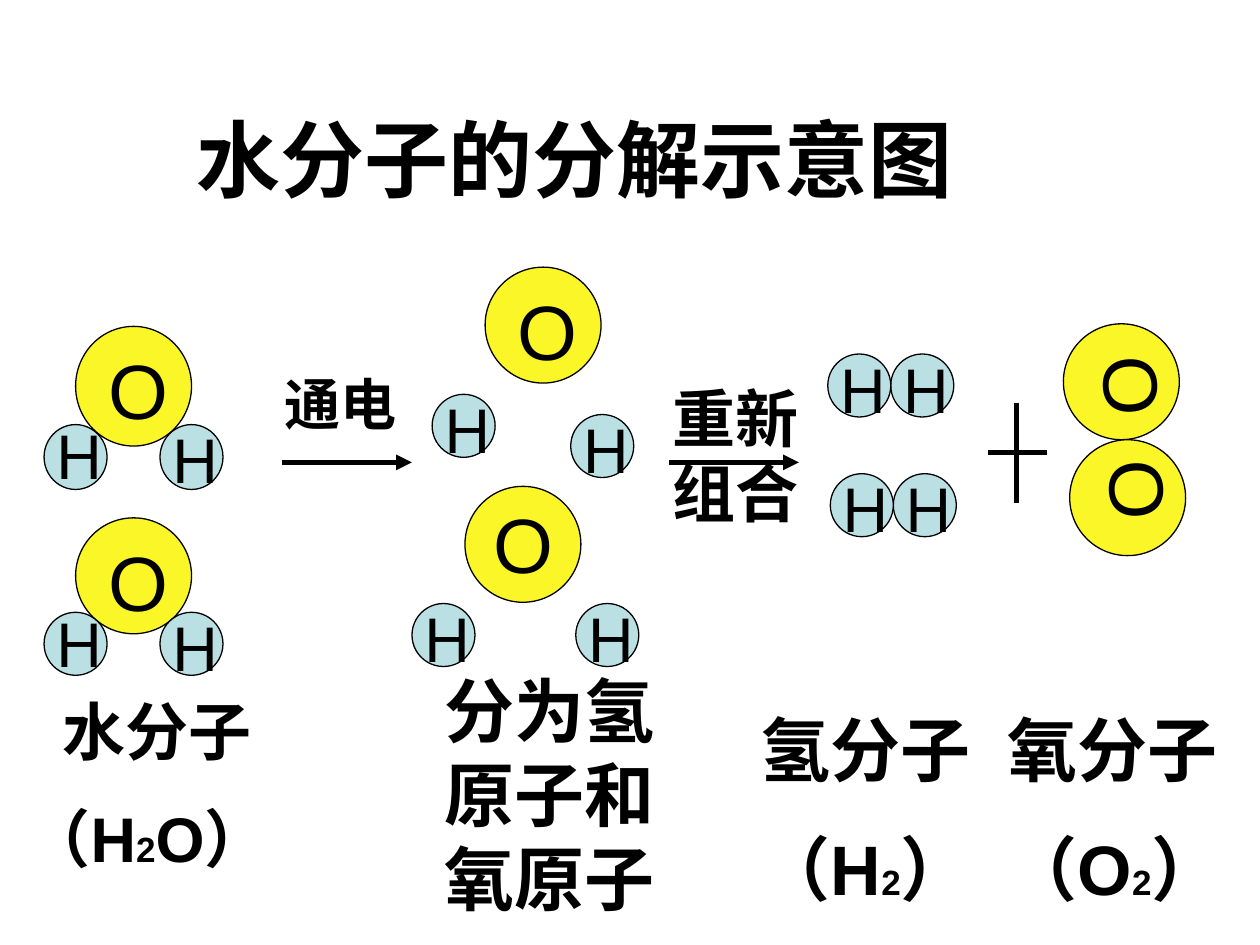
from dataclasses import dataclass

from lxml import etree
from pptx import Presentation
from pptx.dml.color import RGBColor
from pptx.enum.shapes import MSO_CONNECTOR, MSO_SHAPE
from pptx.enum.text import MSO_ANCHOR, MSO_AUTO_SIZE, PP_ALIGN
from pptx.oxml.ns import qn
from pptx.util import Inches, Pt

ELLIPSE = MSO_SHAPE.OVAL
STRAIGHT = MSO_CONNECTOR.STRAIGHT
TOP = MSO_ANCHOR.TOP
LEFT = PP_ALIGN.LEFT
GROW = MSO_AUTO_SIZE.SHAPE_TO_FIT_TEXT


@dataclass(frozen=True)
class Theme:
    font: str = "Arial"
    ink: RGBColor = RGBColor(0x00, 0x00, 0x00)
    oxygen: RGBColor = RGBColor(0xFB, 0xF6, 0x27)
    hydrogen: RGBColor = RGBColor(0xBB, 0xE0, 0xE3)
    title: int = 48
    product: int = 40
    label: int = 36
    step: int = 32
    subscript: int = 20
    outline: float = 0.75
    stroke: float = 3


THEME = Theme()


@dataclass(frozen=True)
class Element:
    size: float
    fill: RGBColor
    text_size: int
    label_width: float
    label_height: float
    label_shift: tuple[float, float]


ELEMENTS = {
    "O": Element(0.92, THEME.oxygen, 44, 0.67, 0.83, (0.16, 0.08)),
    "H": Element(0.5, THEME.hydrogen, THEME.label, 0.67, 0.7, (0, -0.08)),
}


@dataclass(frozen=True)
class Atom:
    symbol: str
    left: float
    top: float
    label_shift: tuple[float, float] | None = None
    stretch: float = 0


@dataclass(frozen=True)
class Molecule:
    atoms: tuple[Atom, ...]
    rotation: float = 0


@dataclass(frozen=True)
class Caption:
    lines: tuple[tuple[str, ...], ...]
    left: float
    top: float
    width: float
    height: float
    size: int
    indent: float = 0


@dataclass(frozen=True)
class Stroke:
    start: tuple[float, float]
    end: tuple[float, float]
    arrow: bool = False


def water(top: float, hydrogen_top: float, stretch: float) -> Molecule:
    return Molecule((
        Atom("O", 0.6, top, stretch=stretch),
        Atom("H", 1.27, hydrogen_top, stretch=stretch / 2),
        Atom("H", 0.35, hydrogen_top, (0, -0.11), stretch / 2),
    ))


def hydrogen_pair(left: float, top: float) -> Molecule:
    return Molecule((Atom("H", left + 0.5, top), Atom("H", left, top)))


MOLECULES = (
    water(4.11, 4.86, 0),
    water(2.59, 3.37, 0.03),
    Molecule((Atom("O", 8.44, 2.57), Atom("O", 8.49, 3.49, (0.16, -0.01))), 267),
    hydrogen_pair(6.57, 2.81),
    hydrogen_pair(6.59, 3.76),
    Molecule((Atom("O", 3.85, 2.12),)),
    Molecule((Atom("O", 3.69, 3.86, (0.13, 0.03)),)),
    Molecule((Atom("H", 4.53, 3.29),)),
    Molecule((Atom("H", 3.43, 3.13),)),
    Molecule((Atom("H", 4.57, 4.79),)),
    Molecule((Atom("H", 3.27, 4.79),)),
)

CAPTIONS = (
    Caption((("重新组合",),), 5.24, 2.96, 1.26, 1.3, THEME.label),
    Caption((("水分子",), ("（H", "2", "O）")), 0.12, 5.45, 2.42, 1.6, THEME.label, 0.28),
    Caption((("氧分子",), ("（O", "2", "）")), 7.9, 5.56, 3.17, 1.77, THEME.product),
    Caption((("氢分子",), ("（H", "2", "）")), 5.94, 5.56, 3.33, 1.77, THEME.product),
    Caption((("通电",),), 2.16, 2.88, 1.26, 0.63, THEME.step),
    Caption((("分为氢原子和氧原子",),), 3.43, 5.25, 2.28, 2.1, THEME.product),
)

ARROWS = (
    Stroke((2.24, 3.67), (3.27, 3.67), True),
    Stroke((5.31, 3.67), (6.34, 3.67), True),
)
PLUS = (
    Stroke((7.84, 3.59), (8.31, 3.59)),
    Stroke((8.07, 3.2), (8.07, 3.99)),
)


def format_paragraph(para, size: int, bold: bool) -> None:
    para.alignment = LEFT
    para.font.name = THEME.font
    para.font.size = Pt(size)
    para.font.bold = bold
    para.font.color.rgb = THEME.ink


def add_label(shapes, text: str, left: float, top: float, element: Element, rotation: float) -> None:
    box = shapes.add_textbox(
        Inches(left), Inches(top), Inches(element.label_width), Inches(element.label_height))
    box.rotation = rotation
    box.text_frame.word_wrap = True
    box.text_frame.auto_size = GROW
    para = box.text_frame.paragraphs[0]
    para.text = text
    format_paragraph(para, element.text_size, False)


def add_molecule(shapes, molecule: Molecule) -> None:
    group = shapes.add_group_shape()
    for atom in molecule.atoms:
        element = ELEMENTS[atom.symbol]
        ball = group.shapes.add_shape(
            ELLIPSE, Inches(atom.left), Inches(atom.top),
            Inches(element.size), Inches(element.size + atom.stretch))
        ball.rotation = molecule.rotation
        ball.shadow.inherit = False
        ball.fill.solid()
        ball.fill.fore_color.rgb = element.fill
        ball.line.color.rgb = THEME.ink
        ball.line.width = Pt(THEME.outline)
    for atom in molecule.atoms:
        element = ELEMENTS[atom.symbol]
        across, down = atom.label_shift or element.label_shift
        add_label(group.shapes, atom.symbol, atom.left + across, atom.top + down,
                  element, molecule.rotation)


def add_caption(shapes, caption: Caption) -> None:
    box = shapes.add_textbox(
        Inches(caption.left), Inches(caption.top), Inches(caption.width), Inches(caption.height))
    frame = box.text_frame
    frame.word_wrap = True
    frame.auto_size = GROW
    for index, line in enumerate(caption.lines):
        para = frame.add_paragraph() if index else frame.paragraphs[0]
        format_paragraph(para, caption.size, True)
        if index:
            para.space_before = Pt(caption.size / 2)
        elif caption.indent:
            para._p.get_or_add_pPr().set("marL", str(Inches(caption.indent)))
        for text in line:
            span = para.add_run()
            span.text = text
            if text.isdigit():
                span.font.size = Pt(THEME.subscript)


def add_stroke(shapes, stroke: Stroke) -> None:
    points = (Inches(value) for value in stroke.start + stroke.end)
    connector = shapes.add_connector(STRAIGHT, *points)
    connector.line.color.rgb = THEME.ink
    connector.line.width = Pt(THEME.stroke)
    if stroke.arrow:
        etree.SubElement(connector.line._get_or_add_ln(), qn("a:tailEnd"), type="triangle")
    etree.SubElement(connector._element.spPr, qn("a:effectLst"))


def add_title(slide, text: str) -> None:
    title = slide.shapes.title
    title.left, title.top = Inches(1.46), Inches(0.8)
    title.width, title.height = Inches(7.4), Inches(0.9)
    frame = title.text_frame
    frame.text = text
    frame.vertical_anchor = TOP
    frame.auto_size = GROW
    format_paragraph(frame.paragraphs[0], THEME.title, True)


def main() -> None:
    deck = Presentation()
    deck.slide_width, deck.slide_height = Inches(10), Inches(7.5)
    page = deck.slides.add_slide(deck.slide_layouts[5])
    add_title(page, "水分子的分解示意图")
    for molecule in MOLECULES:
        add_molecule(page.shapes, molecule)
    for caption in CAPTIONS:
        add_caption(page.shapes, caption)
    for arrow in ARROWS:
        add_stroke(page.shapes, arrow)
    plus = page.shapes.add_group_shape()
    for stroke in PLUS:
        add_stroke(plus.shapes, stroke)
    deck.save("out.pptx")


if __name__ == "__main__":
    main()
